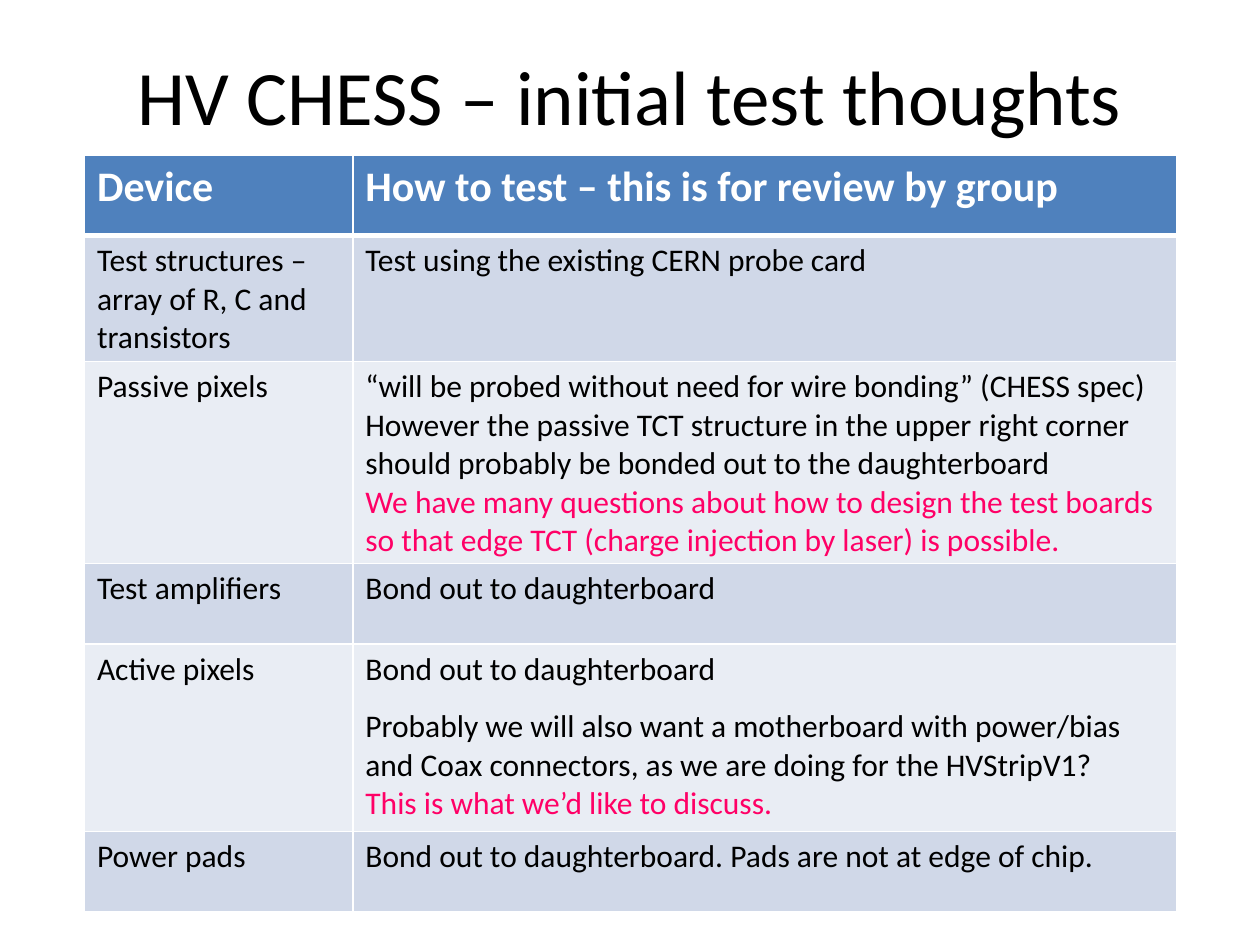
from pptx import Presentation
from pptx.dml.color import RGBColor
from pptx.enum.text import MSO_ANCHOR, PP_ALIGN
from pptx.oxml.ns import qn
from pptx.util import Inches, Pt
from lxml.etree import SubElement

FONT = "Calibri"
BLACK, WHITE, PINK = "000000", "FFFFFF", "FF0066"
HEADER_FILL, BAND_FILLS = "4F81BD", ("D0D8E8", "E9EDF4")
COLUMN_WIDTHS = (2.13, 6.54)
ROW_HEIGHTS = (0.64, 0.98, 1.57, 0.64, 1.49, 0.64)

HEADER = ("Device", "How to test – this is for review by group")
DEVICES = [
    ("Test structures – array of R, C and transistors",
     [("Test using the existing CERN probe card", BLACK, 0)]),
    ("Passive pixels",
     [("“will be probed without need for wire bonding” (CHESS spec)", BLACK, 0),
      ("However the passive TCT structure in the upper right corner should "
       "probably be bonded out to the daughterboard", BLACK, 0),
      ("We have many questions about how to design the test boards so that "
       "edge TCT (charge injection by laser) is possible.", PINK, 0)]),
    ("Test amplifiers", [("Bond out to daughterboard", BLACK, 0)]),
    ("Active pixels",
     [("Bond out to daughterboard", BLACK, 0),
      ("Probably we will also want a motherboard with power/bias and Coax "
       "connectors, as we are doing for the HVStripV1?", BLACK, 11),
      ("This is what we’d like to discuss.", PINK, 0)]),
    ("Power pads",
     [("Bond out to daughterboard. Pads are not at edge of chip.", BLACK, 0)]),
]


def color(value):
    """Turn a hex string into a colour."""
    return RGBColor.from_string(value)


def add_run(paragraph, text, size, hex_color, bold=False):
    """Add one formatted run to a paragraph."""
    run = paragraph.add_run()
    run.text = text
    run.font.name = FONT
    run.font.size = Pt(size)
    run.font.bold = bold
    run.font.color.rgb = color(hex_color)


def add_title(slide, text):
    """Add the centred slide title."""
    box = slide.shapes.add_textbox(Inches(0.5), Inches(0.13), Inches(9), Inches(1.25))
    frame = box.text_frame
    frame.word_wrap = True
    frame.vertical_anchor = MSO_ANCHOR.MIDDLE
    paragraph = frame.paragraphs[0]
    paragraph.alignment = PP_ALIGN.CENTER
    add_run(paragraph, text, 44, BLACK)


def set_borders(cell, bottom_width):
    """Draw white lines on the four sides of a cell."""
    properties = cell._tc.get_or_add_tcPr()
    for side, width in (("L", 1), ("R", 1), ("T", 1), ("B", bottom_width)):
        line = SubElement(properties, qn(f"a:ln{side}"), w=str(Pt(width)))
        fill = SubElement(line, qn("a:solidFill"))
        SubElement(fill, qn("a:srgbClr"), val=WHITE)


def fill_cell(cell, lines, fill, size=18, bold=False, bottom_width=1):
    """Write the lines of a cell and set its borders and fill."""
    set_borders(cell, bottom_width)
    cell.fill.solid()
    cell.fill.fore_color.rgb = color(fill)
    frame = cell.text_frame
    for index, (text, hex_color, gap) in enumerate(lines):
        paragraph = frame.add_paragraph() if index else frame.paragraphs[0]
        if gap:
            paragraph.space_before = Pt(gap)
        add_run(paragraph, text, size, hex_color, bold)


def add_device_table(slide):
    """Add the table of devices and test methods."""
    frame = slide.shapes.add_table(
        len(ROW_HEIGHTS), len(COLUMN_WIDTHS), Inches(0.67), Inches(1.23),
        Inches(sum(COLUMN_WIDTHS)), Inches(sum(ROW_HEIGHTS)))
    table = frame.table
    table.horz_banding = False
    for column, width in zip(table.columns, COLUMN_WIDTHS):
        column.width = Inches(width)
    for row, height in zip(table.rows, ROW_HEIGHTS):
        row.height = Inches(height)
    for index, text in enumerate(HEADER):
        fill_cell(table.cell(0, index), [(text, WHITE, 0)], HEADER_FILL, 24, True, 3)
    for index, (device, method) in enumerate(DEVICES):
        fill = BAND_FILLS[index % 2]
        fill_cell(table.cell(index + 1, 0), [(device, BLACK, 0)], fill)
        fill_cell(table.cell(index + 1, 1), method, fill)


def main():
    """Build and save the presentation."""
    presentation = Presentation()
    presentation.slide_width = Inches(10)
    presentation.slide_height = Inches(7.5)
    slide = presentation.slides.add_slide(presentation.slide_layouts[6])
    add_title(slide, "HV CHESS – initial test thoughts")
    add_device_table(slide)
    presentation.save("out.pptx")


if __name__ == "__main__":
    main()
